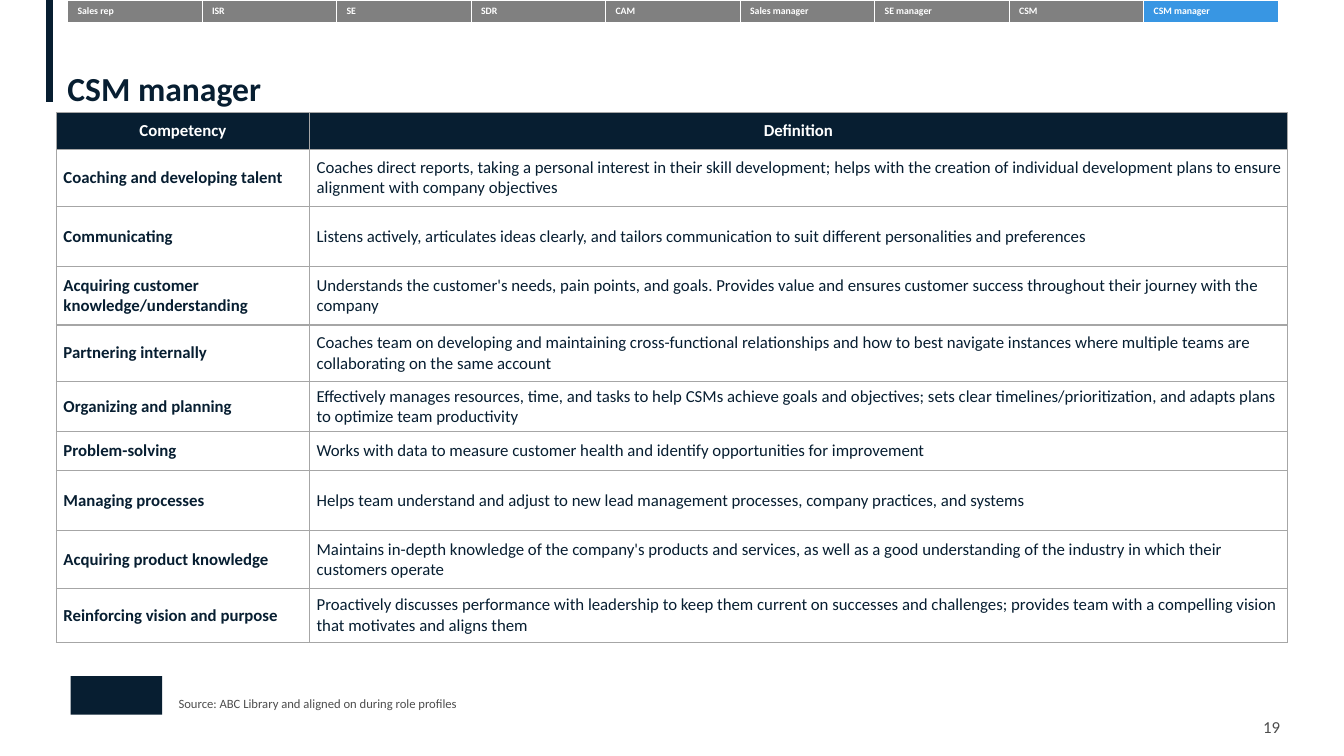
from lxml import etree
from pptx import Presentation
from pptx.dml.color import RGBColor
from pptx.enum.shapes import MSO_CONNECTOR, MSO_SHAPE
from pptx.enum.text import MSO_ANCHOR, PP_ALIGN
from pptx.oxml.ns import qn
from pptx.util import Cm, Pt

LEFT, CENTER = PP_ALIGN.LEFT, PP_ALIGN.CENTER
TOP, MIDDLE, BOTTOM = MSO_ANCHOR.TOP, MSO_ANCHOR.MIDDLE, MSO_ANCHOR.BOTTOM
NAVY = RGBColor(0x07, 0x1E, 0x31)
BLUE = RGBColor(0x38, 0x96, 0xE3)
GRAY = RGBColor(0x80, 0x80, 0x80)
RULE_GRAY = RGBColor(0xA6, 0xA6, 0xA6)
TEXT_GRAY = RGBColor(0x4D, 0x4D, 0x4D)
WHITE = RGBColor(0xFF, 0xFF, 0xFF)

TITLE = "CSM manager"
ROLES = ["Sales rep", "ISR", "SE", "SDR", "CAM", "Sales manager", "SE manager",
         "CSM", "CSM manager"]
SOURCE = "Source: ABC Library and aligned on during role profiles"
PAGE_NUMBER = "19"
HEADER = ("Competency", "Definition")
COMPETENCIES = [
    ("Coaching and developing talent",
     "Coaches direct reports, taking a personal interest in their skill development; helps with "
     "the creation of individual development plans to ensure alignment with company objectives"),
    ("Communicating",
     "Listens actively, articulates ideas clearly, and tailors communication to suit different "
     "personalities and preferences"),
    ("Acquiring customer knowledge/understanding",
     "Understands the customer's needs, pain points, and goals. Provides value and ensures "
     "customer success throughout their journey with the company"),
    ("Partnering internally",
     "Coaches team on developing and maintaining cross-functional relationships and how to best "
     "navigate instances where multiple teams are collaborating on the same account"),
    ("Organizing and planning",
     "Effectively manages resources, time, and tasks to help CSMs achieve goals and objectives; "
     "sets clear timelines/prioritization, and adapts plans to optimize team productivity"),
    ("Problem-solving",
     "Works with data to measure customer health and identify opportunities for improvement"),
    ("Managing processes",
     "Helps team understand and adjust to new lead management processes, company practices, "
     "and systems"),
    ("Acquiring product knowledge",
     "Maintains in-depth knowledge of the company's products and services, as well as a good "
     "understanding of the industry in which their customers operate"),
    ("Reinforcing vision and purpose",
     "Proactively discusses performance with leadership to keep them current on successes and "
     "challenges; provides team with a compelling vision that motivates and aligns them"),
]
COLUMN_WIDTHS = [6.38, 24.64]
ROW_HEIGHTS = [0.92, 1.45, 1.5, 1.48, 1.42, 1.27, 0.97, 1.52, 1.46, 1.35]
TAB_WIDTH, TAB_HEIGHT = 3.39, 0.56


def set_all(target, formats):
    for name, value in formats.items():
        setattr(target, name, value)


def write(frame, text, size, color, bold=False, align=LEFT):
    frame.text = text
    paragraph = frame.paragraphs[0]
    paragraph.alignment = align
    font = paragraph.runs[0].font
    set_all(font, {"name": "Calibri", "size": Pt(size), "bold": bold})
    font.color.rgb = color


def clear_margins(frame, anchor):
    set_all(frame, {"margin_left": 0, "margin_right": 0, "margin_top": 0, "margin_bottom": 0,
                    "word_wrap": True, "vertical_anchor": anchor})


def add_label(slide, box, text, size, anchor):
    frame = slide.shapes.add_textbox(*map(Cm, box)).text_frame
    clear_margins(frame, anchor)
    write(frame, text, size, TEXT_GRAY)


def add_plain_table(slide, left, top, widths, heights):
    table = slide.shapes.add_table(len(heights), len(widths), Cm(left), Cm(top),
                                   Cm(sum(widths)), Cm(sum(heights))).table
    set_all(table, {"first_row": False, "horz_banding": False})
    for column, width in zip(table.columns, widths):
        column.width = Cm(width)
    for row, height in zip(table.rows, heights):
        row.height = Cm(height)
    return table


def style_cell(cell, sides, line_color, line_width, fill):
    """Draw the borders on the given sides (L, R, T, B), then fill; None leaves it clear."""
    properties = cell._tc.get_or_add_tcPr()
    for side in sides:
        border = etree.SubElement(properties, qn(f"a:ln{side}"), w=str(Pt(line_width)))
        solid = etree.SubElement(border, qn("a:solidFill"))
        etree.SubElement(solid, qn("a:srgbClr"), val=str(line_color))
    if fill is None:
        cell.fill.background()
    else:
        cell.fill.solid()
        cell.fill.fore_color.rgb = fill


def add_accent_bar(slide):
    bar = slide.shapes.add_connector(MSO_CONNECTOR.STRAIGHT, Cm(1.25), 0, Cm(1.25), Cm(2.57))
    bar.line.color.rgb = NAVY
    bar.line.width = Pt(5)
    etree.SubElement(bar._element.spPr, qn("a:effectLst"))


def add_logo_block(slide):
    block = slide.shapes.add_shape(MSO_SHAPE.RECTANGLE, Cm(1.78), Cm(17.04), Cm(2.31), Cm(0.97))
    block.shadow.inherit = False
    block.fill.solid()
    block.fill.fore_color.rgb = NAVY
    block.line.fill.background()


def add_title(slide):
    title = slide.shapes.title
    set_all(title, {"left": Cm(1.7), "top": Cm(1.78), "width": Cm(31.52), "height": Cm(0.97)})
    clear_margins(title.text_frame, BOTTOM)
    write(title.text_frame, TITLE, 24, NAVY, bold=True)
    title.text_frame.paragraphs[0].line_spacing = 0.9


def add_competencies(slide):
    table = add_plain_table(slide, 1.42, 2.84, COLUMN_WIDTHS, ROW_HEIGHTS)
    for r, texts in enumerate([HEADER] + COMPETENCIES):
        is_header = r == 0
        for c, text in enumerate(texts):
            cell = table.cell(r, c)
            set_all(cell, {"margin_left": 0 if is_header else Cm(0.18), "margin_right": 0,
                           "margin_top": 0, "margin_bottom": 0, "vertical_anchor": MIDDLE})
            style_cell(cell, "LRTB", RULE_GRAY, 1, NAVY if is_header else None)
            write(cell.text_frame, text, 12, WHITE if is_header else NAVY,
                  bold=is_header or c == 0, align=CENTER if is_header else LEFT)


def add_role_tabs(slide):
    table = add_plain_table(slide, 1.7, 0, [TAB_WIDTH] * len(ROLES), [TAB_HEIGHT])
    for c, role in enumerate(ROLES):
        cell = table.cell(0, c)
        style_cell(cell, "LR", WHITE, 0.5, BLUE if role == TITLE else GRAY)
        write(cell.text_frame, role, 7, WHITE, bold=True)


def main():
    deck = Presentation()
    set_all(deck, {"slide_width": Cm(33.87), "slide_height": Cm(19.05)})
    slide = deck.slides.add_slide(deck.slide_layouts[5])
    add_accent_bar(slide)
    add_logo_block(slide)
    add_title(slide)
    add_competencies(slide)
    add_label(slide, (31.83, 18.06, 0.86, 0.51), PAGE_NUMBER, 12, MIDDLE)
    add_label(slide, (4.5, 17.53, 16.48, 0.38), SOURCE, 9, TOP)
    add_role_tabs(slide)
    deck.save("out.pptx")


if __name__ == "__main__":
    main()
